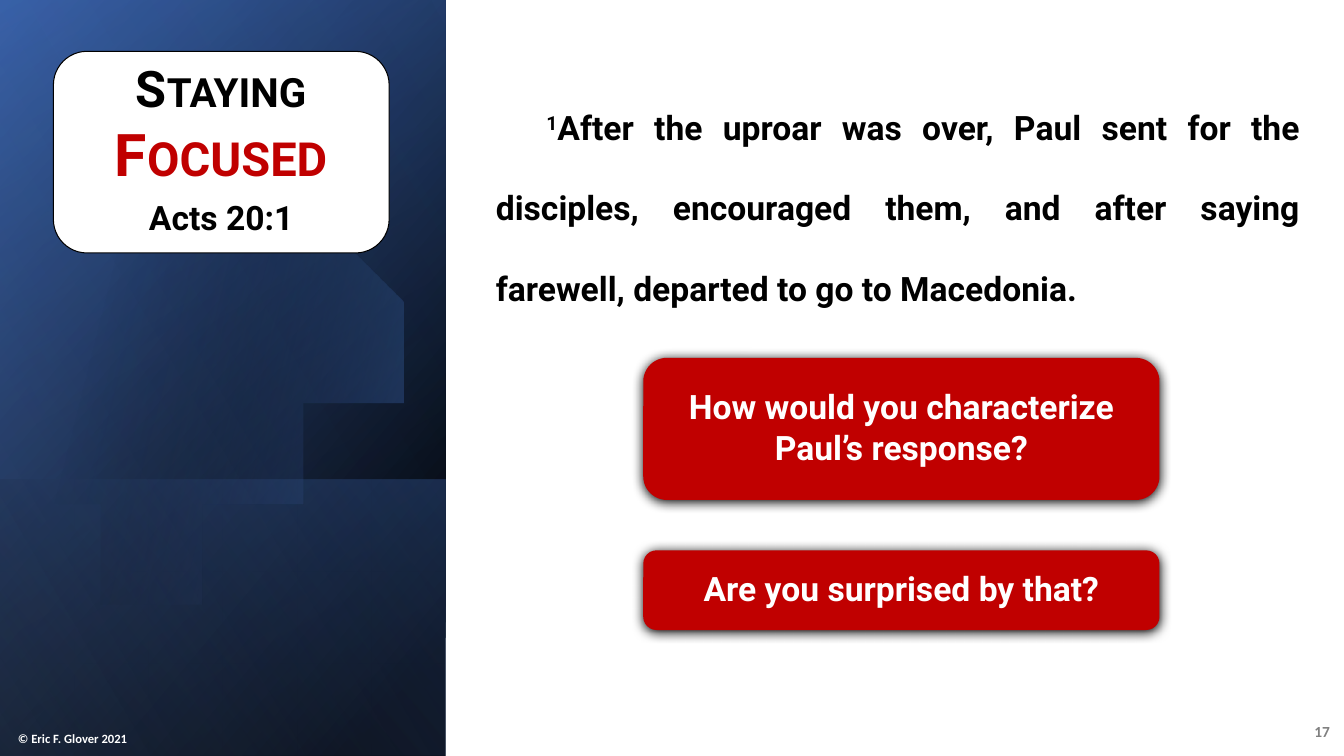
from pptx import Presentation
from pptx.dml.color import RGBColor
from pptx.enum import shapes, text
from pptx.oxml import ns
from pptx.util import Inches, Pt
from lxml import etree

# Content: runs are (text, size, colour, extra properties)
BLACK, WHITE, RED = "000000", "FFFFFF", "C00000"
SIDE_W, SLIDE_W, SLIDE_H = 4.42, 13.33, 7.5
TITLE = [
    [("Staying", 36, BLACK, {"cap": "small"}), (" ", 32, BLACK, {"cap": "small"}),
     ("Focused", 42, RED, {"cap": "small"})],
    [("Acts 20:1", 24, BLACK, {})],
]
VERSE = [[
    ("1", 24, BLACK, {"baseline": "30000"}),
    ("After the uproar was over, Paul sent for the disciples, encouraged them, "
     "and after saying farewell, departed to go to Macedonia.", 24, BLACK, {}),
]]
QUESTIONS = [  # text, top, height
    ("How would you characterize Paul’s response?", 3.55, 1.41),
    ("Are you surprised by that?", 5.46, 0.79),
]
# Side panels: top, height, angle, stops (position, colour, opacity)
BASE_PANELS = [
    (0, 7.5, 50, [(8, BLACK, 100), (100, "2F5597", 100)]),
    (0, 7.5, 30, [(0, BLACK, 0), (99, "4472C4", 46)]),
    (4.76, 2.74, 130, [(2, "4472C4", 29), (100, BLACK, 30)]),
]
TOP_PANEL = (0, 7.5, 120, [(0, BLACK, 0), (99, "8FAADC", 11)])
# Disc: Bezier curves (four points each), then the straight left edge
DISC_CURVES = [
    [(1.49, 1.1), (2.46, 1.12), (3.35, 1.77), (3.63, 2.75)],
    [(3.63, 2.75), (3.98, 3.97), (3.28, 5.23), (2.07, 5.58)],
    [(2.07, 5.58), (1.31, 5.8), (0.53, 5.61), (-0.03, 5.14)],
    [(-0.15, 5.03), (-0.15, 1.75), (-0.15, 1.75), (-0.15, 1.75)],
    [(0, 1.61), (0.23, 1.42), (0.5, 1.28), (0.8, 1.19)],
    [(0.8, 1.19), (1.03, 1.13), (1.26, 1.1), (1.49, 1.1)],
]
DISC_STOPS = [(29, BLACK, 0), (100, "4472C4", 43)]

prs = Presentation()
prs.slide_width, prs.slide_height = Inches(SLIDE_W), Inches(SLIDE_H)
slide = prs.slides.add_slide(prs.slide_layouts[6])


def rgb(value):
    return RGBColor.from_string(value)


def sub(parent, tag, **attrs):
    return etree.SubElement(parent, ns.qn(tag), {k: str(v) for k, v in attrs.items()})


def gradient(s, angle, stops):
    s.shadow.inherit = False
    s.line.fill.background()
    s.fill.gradient()
    grad = s._element.spPr.find(ns.qn("a:gradFill"))
    grad.clear()
    grad.set("rotWithShape", "1")
    stop_list = sub(grad, "a:gsLst")
    for position, colour, opacity in stops:
        stop = sub(stop_list, "a:gs", pos=position * 1000)
        sub(sub(stop, "a:srgbClr", val=colour), "a:alpha", val=opacity * 1000)
    sub(grad, "a:lin", ang=angle * 60000, scaled=0)


def box(kind, left, top, width, height, fill):
    s = slide.shapes.add_shape(kind, *map(Inches, (left, top, width, height)))
    s.shadow.inherit = False
    s.fill.solid()
    s.fill.fore_color.rgb = rgb(fill)
    s.line.fill.background()
    return s


def panel(top, height, angle, stops):
    # A quarter turn swaps width and height around the same centre
    shift = (height - SIDE_W) / 2
    s = box(shapes.MSO_SHAPE.RECTANGLE, -shift, top + shift, height, SIDE_W, BLACK)
    s.rotation = 90
    s._element.spPr.xfrm.set("flipH", "1")
    gradient(s, angle, stops)


def write(s, paragraphs, align, anchor, font="Roboto", after=0, insets=None):
    tf = s.text_frame
    tf.word_wrap = True
    tf.vertical_anchor = anchor
    if insets:
        tf.margin_left, tf.margin_top, tf.margin_right, tf.margin_bottom = map(Inches, insets)
    for i, runs in enumerate(paragraphs):
        p = tf.add_paragraph() if i else tf.paragraphs[0]
        p.alignment = align
        p.space_after = Pt(after)
        for words, size, colour, extra in runs:
            r = p.add_run()
            r.text = words
            r.font.name, r.font.size, r.font.bold = font, Pt(size), True
            r.font.color.rgb = rgb(colour)
            for key, value in extra.items():
                r._r.get_or_add_rPr().set(key, value)
    return tf


def textbox(left, top, width, height):
    return slide.shapes.add_textbox(*map(Inches, (left, top, width, height)))


def curve_points(a, b, c, d, steps=16):
    for t in (i / steps for i in range(steps + 1)):
        weights = ((1 - t) ** 3, 3 * t * (1 - t) ** 2, 3 * t * t * (1 - t), t ** 3)
        yield tuple(sum(w * q[k] for w, q in zip(weights, (a, b, c, d))) for k in (0, 1))


align, anchor = text.PP_ALIGN, text.MSO_ANCHOR
rounded = shapes.MSO_SHAPE.ROUNDED_RECTANGLE

# Background and side panels with the disc between them
box(shapes.MSO_SHAPE.RECTANGLE, 0, 0, SLIDE_W, SLIDE_H, WHITE)
for spec_row in BASE_PANELS:
    panel(*spec_row)
points = [pt for curve in DISC_CURVES for pt in curve_points(*curve)]
builder = slide.shapes.build_freeform(*points[0], scale=Inches(1))
builder.add_line_segments(points[1:], close=True)
gradient(builder.convert_to_shape(), 14, DISC_STOPS)
panel(*TOP_PANEL)

# Slide number and copyright line
write(textbox(12.8, 7.06, 0.49, 0.4), [[("17", 11, "808080", {})]],
      align.RIGHT, anchor.MIDDLE, "Calibri", 6)
write(textbox(0.08, 7.17, 1.57, 0.28), [[("© Eric F. Glover 2021", 9, WHITE, {})]],
      align.LEFT, anchor.BOTTOM, "Calibri")

# Verse
tf = write(textbox(4.82, 0.61, 8.17, 6.23), VERSE, align.JUSTIFY, anchor.TOP, after=12)
p = tf.paragraphs[0]
p.line_spacing = 2.0
p._p.get_or_add_pPr().set("indent", str(Inches(0.5)))

# Title card
s = box(rounded, 0.53, 0.51, 3.33, 2, WHITE)
s.line.color.rgb = rgb(BLACK)
s.line.width = Pt(0.75)
write(s, TITLE, align.CENTER, anchor.MIDDLE, after=6, insets=(0, 0, 0, 0.1))

# Question buttons
for words, top, height in QUESTIONS:
    s = box(rounded, 6.38, top, 5.12, height, RED)
    effects = s._element.spPr.find(ns.qn("a:effectLst"))
    shadow = sub(effects, "a:outerShdw", blurRad=Pt(8.5), dist=Pt(1), dir=90 * 60000,
                 algn="t", rotWithShape=0)
    sub(shadow, "a:srgbClr", val=BLACK)
    write(s, [[(words, 24, WHITE, {})]], align.CENTER, anchor.MIDDLE,
          insets=(0.1, 0, 0.1, 0.05))

prs.save("out.pptx")
